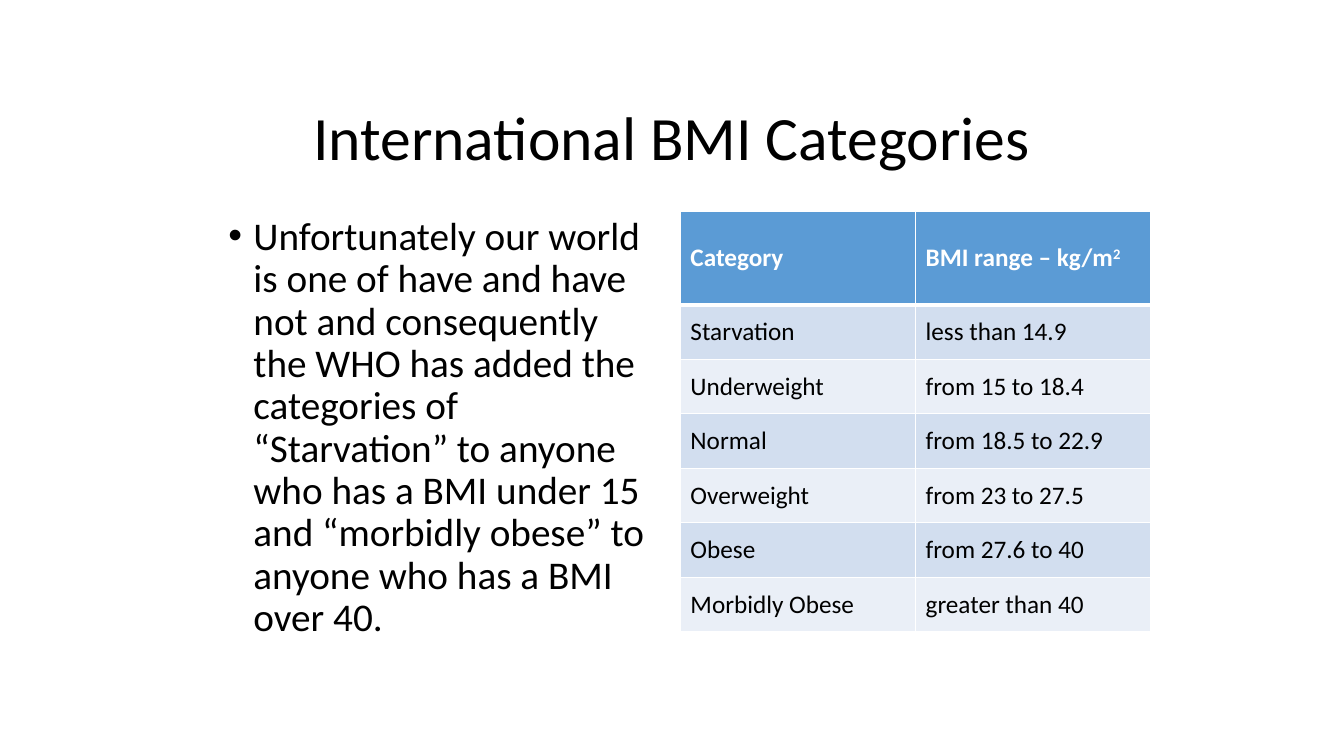
from pptx import Presentation
from pptx.dml.color import RGBColor as RGB
from pptx.enum.text import MSO_ANCHOR as Anchor, PP_ALIGN as Align
from pptx.oxml.ns import qn
from pptx.util import Inches, Pt
from lxml.etree import SubElement as Sub

INK = {
    "text": "000000",
    "white": "FFFFFF",
    "head": "5B9BD5",
    "odd": "D2DEEF",
    "even": "EAEFF7",
}
ROWS = [
    ("Category", "BMI range – kg/m"),
    ("Starvation", "less than 14.9"),
    ("Underweight", "from 15 to 18.4"),
    ("Normal", "from 18.5 to 22.9"),
    ("Overweight", "from 23 to 27.5"),
    ("Obese", "from 27.6 to 40"),
    ("Morbidly Obese", "greater than 40"),
]
BODY = (
    "Unfortunately our world is one of have and have not and consequently "
    "the WHO has added the categories of “Starvation” to anyone who has a "
    "BMI under 15 and “morbidly obese” to anyone who has a BMI over 40."
)


class Page:
    """Style and slide; lengths are cells of a 160 by 90 grid."""

    font = "Calibri"

    def __init__(self, deck):
        self.slide = deck.slides.add_slide(deck.slide_layouts[6])
        self.col = deck.slide_width / 160
        self.row = deck.slide_height / 90

    def box(self, x, y, w, h):
        return (round(x * self.col), round(y * self.row),
                round(w * self.col), round(h * self.row))

    def style(self, para, size, ink="text", bold=False):
        for run in para.runs:
            run.font.name = self.font
            run.font.size = Pt(size)
            run.font.bold = bold
            run.font.color.rgb = RGB.from_string(INK[ink])

    def text(self, words, area, size, align=Align.LEFT, anchor=Anchor.TOP):
        frame = self.slide.shapes.add_textbox(*self.box(*area)).text_frame
        frame.word_wrap = True
        frame.vertical_anchor = anchor
        frame.text = words
        para = frame.paragraphs[0]
        para.alignment = align
        para.line_spacing = 0.9
        self.style(para, size)
        return para

    def bullet(self, words, area, size):
        para = self.text(words, area, size)
        para.space_before = Pt(10)
        props = para._p.get_or_add_pPr()
        props.set("marL", str(Inches(0.25)))
        props.set("indent", str(Inches(-0.25)))
        Sub(props, qn("a:buFont"), typeface="Arial")
        Sub(props, qn("a:buChar"), char="•")

    def edge(self, cell, side, width):
        line = Sub(cell._tc.get_or_add_tcPr(), qn("a:ln" + side),
                   w=str(Pt(width)))
        fill = Sub(line, qn("a:solidFill"))
        Sub(fill, qn("a:srgbClr"), val=INK["white"])

    def table(self, rows, area, tall, size):
        shape = self.slide.shapes.add_table(
            len(rows), len(rows[0]), *self.box(*area))
        grid = shape.table
        rest = (area[3] - tall) / (len(rows) - 1)
        for r, words in enumerate(rows):
            head = r == 0
            grid.rows[r].height = round((tall if head else rest) * self.row)
            tint = "head" if head else "odd" if r % 2 else "even"
            for c, word in enumerate(words):
                cell = grid.cell(r, c)
                cell.text = word
                cell.vertical_anchor = Anchor.MIDDLE
                self.style(cell.text_frame.paragraphs[0], size,
                           "white" if head else "text", head)
                # Heavy rule between the header and the first row
                for side in "LRTB":
                    thick = (r, side) in ((0, "B"), (1, "T"))
                    self.edge(cell, side, 3 if thick else 1)
                cell.fill.solid()
                cell.fill.fore_color.rgb = RGB.from_string(INK[tint])
        return grid

    def power(self, cell, word, size):
        para = cell.text_frame.paragraphs[0]
        run = para.add_run()
        run.text = word
        self.style(para, size, "white", True)
        run._r.get_or_add_rPr().set("baseline", "30000")


def main():
    deck = Presentation()
    deck.slide_width, deck.slide_height = Inches(13.33), Inches(7.5)
    page = Page(deck)

    # Title
    page.text("International BMI Categories", (26, 9.2, 108, 15), 44,
              Align.CENTER, Anchor.MIDDLE)

    # Explanation
    page.bullet(BODY, (26, 25.2, 53, 58.2), 28)

    # Category table
    grid = page.table(ROWS, (81, 25.2, 56, 50), 11.1, 18)
    page.power(grid.cell(0, 1), "2", 18)

    deck.save("out.pptx")


if __name__ == "__main__":
    main()
